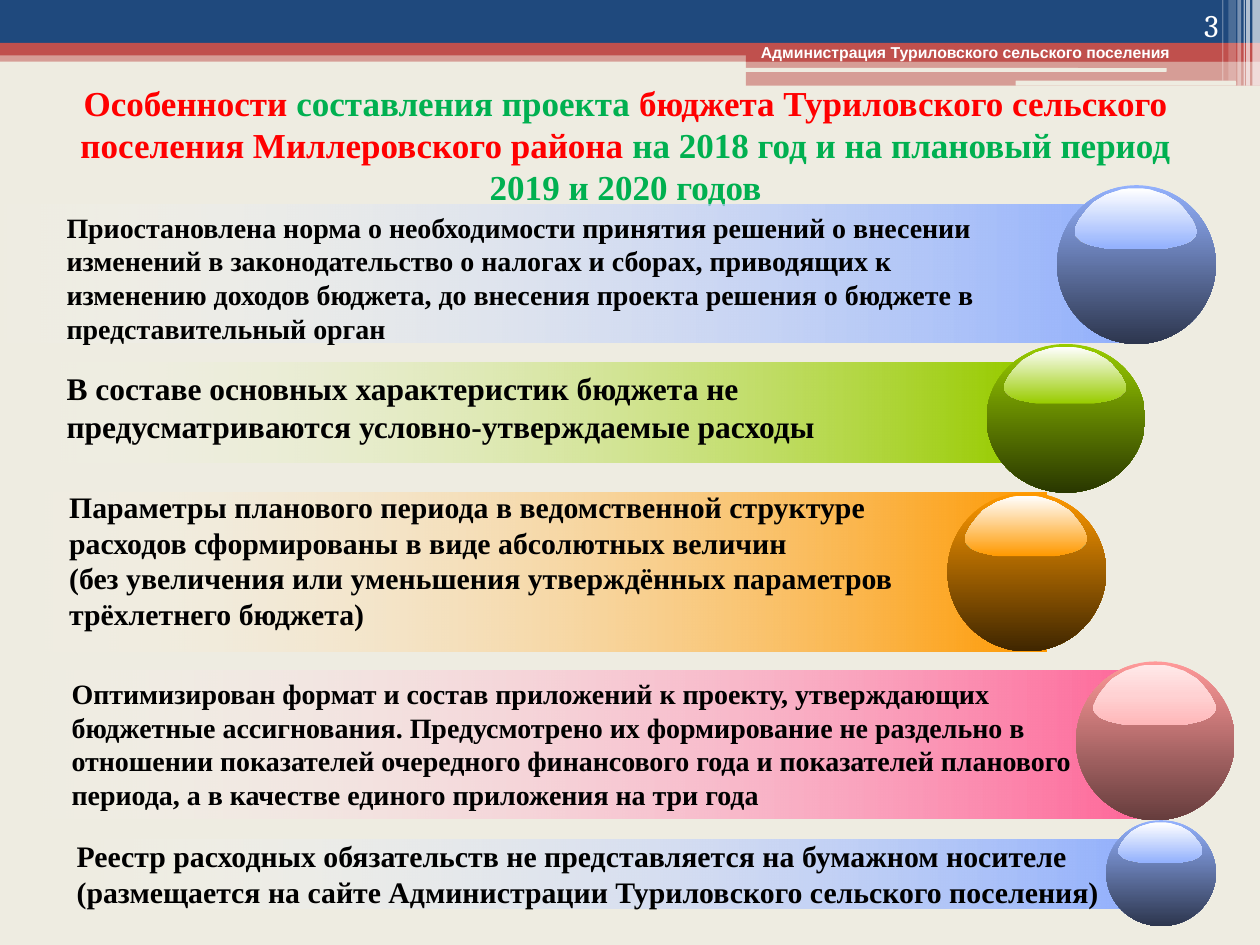
from pptx import Presentation
from pptx.dml.color import RGBColor
from pptx.enum.shapes import MSO_SHAPE
from pptx.enum.text import MSO_ANCHOR, PP_ALIGN
from pptx.oxml import parse_xml
from pptx.oxml.ns import nsdecls, qn
from pptx.util import Inches, Pt

RECTANGLE, ROUNDED, OVAL = MSO_SHAPE.RECTANGLE, MSO_SHAPE.ROUNDED_RECTANGLE, MSO_SHAPE.OVAL
TOP, MIDDLE, BOTTOM = MSO_ANCHOR.TOP, MSO_ANCHOR.MIDDLE, MSO_ANCHOR.BOTTOM
LEFT, CENTER, RIGHT = PP_ALIGN.LEFT, PP_ALIGN.CENTER, PP_ALIGN.RIGHT
SERIF = "Times New Roman"
RED, GREEN, BLACK, WHITE = "FF0000", "00B050", "000000", "FFFFFF"
CREAM, NAVY, BRICK = "EEECE1", "1F497D", "C0504D"

HEADER_BARS = [
    (RECTANGLE, (0, 0.4, 10, 0.09), BRICK, 50),
    (RECTANGLE, (0, 0, 10, 0.34), NAVY, 100),
    (RECTANGLE, (0, 0.34, 10, 0.1), BRICK, 100),
    (RECTANGLE, (5.92, 0.39, 4.08, 0.1), BRICK, 100),
    (RECTANGLE, (5.92, 0.48, 4.08, 0.2), BRICK, 50),
    (ROUNDED, (5.91, 0.54, 3.35, 0.03), CREAM, 100),
    (ROUNDED, (8.06, 0.64, 1.75, 0.04), CREAM, 100),
    (RECTANGLE, (9.94, 0, 0.06, 0.68), WHITE, 65),
    (RECTANGLE, (9.89, 0, 0.03, 0.68), WHITE, 65),
    (RECTANGLE, (9.87, 0, 0.01, 0.68), WHITE, 60),
    (RECTANGLE, (9.82, 0, 0.03, 0.68), WHITE, 40),
    (RECTANGLE, (9.75, 0, 0.06, 0.64), WHITE, 20),
    (RECTANGLE, (9.7, 0, 0.01, 0.64), WHITE, 30),
]

TITLE_RUNS = [
    ("Особенности", RED),
    (" составления проекта ", GREEN),
    ("бюджета Туриловского сельского поселения Миллеровского района ", RED),
    ("на 2018 год и на плановый период 2019 и 2020 годов", GREEN),
]

ROWS = [
    {"band": (-0.28, 1.62, 9.21, 1.1), "color": "93B1FD",
     "ball": (8.39, 1.47, 1.26, 1.26), "shade": 31, "text_box": (0.43, 1.62, 7.64, 1.18), "size": 16,
     "text": ["Приостановлена норма о необходимости принятия решений о внесении изменений в "
              "законодательство о налогах и сборах, приводящих к изменению доходов бюджета, "
              "до внесения проекта решения о бюджете в представительный орган"]},
    {"band": (0, 2.88, 8.07, 0.79), "color": "99CC00",
     "ball": (7.83, 2.73, 1.26, 1.18), "shade": 27, "text_box": (0.43, 2.88, 7.24, 0.71), "size": 18,
     "text": ["В составе основных характеристик бюджета не предусматриваются "
              "условно-утверждаемые расходы"]},
    {"band": (-0.12, 3.91, 8.43, 1.26), "color": "FF9900",
     "ball": (7.52, 3.91, 1.26, 1.26), "shade": 25, "text_box": (0.45, 3.83, 7.72, 1.51), "size": 17,
     "text": ["Параметры планового периода в ведомственной структуре",
              "расходов сформированы в виде абсолютных величин \n(без увеличения или уменьшения "
              "утверждённых параметров трёхлетнего бюджета)"]},
    {"band": (0, 5.32, 9.09, 1.18), "color": "FF6699", "ball_color": "FF9999",
     "gloss": ["FFE9E9", "FFD2D3", "FFB7B9"],
     "ball": (8.54, 5.25, 1.26, 1.26), "shade": 40, "text_box": (0.47, 5.32, 8.19, 1.18), "size": 16,
     "text": ["Оптимизирован формат и состав приложений к проекту, утверждающих бюджетные "
              "ассигнования. Предусмотрено их формирование не раздельно в отношении показателей "
              "очередного финансового года и показателей планового периода, а в качестве единого "
              "приложения на три года"]},
    {"band": (0.51, 6.66, 8.5, 0.55), "color": "93B1FD",
     "ball": (8.78, 6.51, 0.87, 0.84), "shade": 31, "size": 17,
     "text": ["Реестр расходных обязательств не представляется на бумажном носителе",
              "(размещается на сайте Администрации Туриловского сельского поселения)"]},
]

GLOSS_WIDTH, GLOSS_HEIGHT = 97, 47
GLOSS_LEFT_HALF = [
    (48.5, 0), (43, 0), (37, 1), (31, 3), (25, 5), (20, 8), (15, 11), (11, 15), (7, 20), (4, 24),
    (1, 30), (0, 32), (0, 35), (1, 37), (3, 39), (5, 41), (8, 42.5), (12, 44), (16, 45), (21, 46),
    (26, 47), (35, 47),
]


def box(values):
    return [Inches(value) for value in values]


def rgb(color):
    return RGBColor.from_string(color)


def finish(shape):
    shape.shadow.inherit = False
    shape.line.fill.background()


def color_xml(color, alpha=100, shade=100):
    effects = f'<a:alpha val="{alpha * 1000}"/>' if alpha < 100 else ""
    if shade < 100:
        effects += f'<a:gamma/><a:shade val="{shade * 1000}"/><a:invGamma/>'
    return f'<a:srgbClr val="{color}">{effects}</a:srgbClr>'


def fill_gradient(shape, colors, angle):
    """Fill with evenly spaced colors, running clockwise from the left."""
    step = 100000 // (len(colors) - 1)
    stops = "".join(f'<a:gs pos="{index * step}">{color}</a:gs>'
                    for index, color in enumerate(colors))
    shape.fill.background()
    properties = shape._element.spPr
    properties.replace(properties.find(qn("a:noFill")), parse_xml(
        f'<a:gradFill {nsdecls("a")} rotWithShape="1"><a:gsLst>{stops}</a:gsLst>'
        f'<a:lin ang="{angle * 60000}" scaled="0"/></a:gradFill>'))
    finish(shape)


def add_bar(shapes, kind, position, color, opacity):
    bar = shapes.add_shape(kind, *box(position))
    bar.fill.solid()
    bar.fill.fore_color.rgb = rgb(color)
    if opacity < 100:
        color_element = bar._element.spPr.find(qn("a:solidFill"))[0]
        color_element.append(parse_xml(f'<a:alpha {nsdecls("a")} val="{opacity * 1000}"/>'))
    finish(bar)


def write(shape, texts, size, font=SERIF, color=BLACK, bold=True, align=LEFT, anchor=TOP, wrap=True):
    frame = shape.text_frame
    frame.word_wrap = wrap
    frame.vertical_anchor = anchor
    for index, text in enumerate(texts):
        paragraph = frame.add_paragraph() if index else frame.paragraphs[0]
        paragraph.text = text
        paragraph.alignment = align
        paragraph.font.size = Pt(size)
        paragraph.font.name = font
        paragraph.font.bold = bold
        paragraph.font.color.rgb = rgb(color)


def add_ball(shapes, position, color, shade, gloss_colors):
    left, top, width, height = position
    group = shapes.add_group_shape()
    sphere = group.shapes.add_shape(OVAL, *box(position))
    fill_gradient(sphere, [color_xml(color), color_xml(color, shade=shade)], 90)

    right_half = [(GLOSS_WIDTH - x, y) for x, y in reversed(GLOSS_LEFT_HALF[1:])]
    points = [box((left + width * (0.11 + 0.77 * x / GLOSS_WIDTH),
                   top + height * (0.02 + 0.38 * y / GLOSS_HEIGHT)))
              for x, y in GLOSS_LEFT_HALF + right_half]
    builder = group.shapes.build_freeform(*points[0])
    builder.add_line_segments(points[1:], close=True)
    fill_gradient(builder.convert_to_shape(), [color_xml(tone) for tone in gloss_colors], 90)


def add_row(shapes, row):
    band = shapes.add_shape(RECTANGLE, *box(row["band"]))
    fill_gradient(band, [color_xml(WHITE, alpha=0), color_xml(row["color"])], 0)
    add_ball(shapes, row["ball"], row.get("ball_color", row["color"]), row["shade"],
             row.get("gloss", [WHITE, row["color"]]))
    if "text_box" in row:
        write(shapes.add_textbox(*box(row["text_box"])), row["text"], row["size"])
    else:
        write(band, row["text"], row["size"], anchor=MIDDLE, wrap=False)


def add_title(title):
    title.left, title.top, title.width, title.height = box((0.28, 0.6, 9.37, 1.11))
    write(title, [""], 20, align=CENTER)
    for text, color in TITLE_RUNS:
        run = title.text_frame.paragraphs[0].add_run()
        run.text = text
        run.font.color.rgb = rgb(color)


def main():
    presentation = Presentation()
    presentation.slide_width, presentation.slide_height = box((10, 7.5))
    slide = presentation.slides.add_slide(presentation.slide_layouts[5])
    slide.background.fill.solid()
    slide.background.fill.fore_color.rgb = rgb(CREAM)
    shapes = slide.shapes
    for bar in HEADER_BARS:
        add_bar(shapes, *bar)
    add_title(shapes.title)
    for row in ROWS:
        add_row(shapes, row)
    write(shapes.add_textbox(*box((5.94, 0.29, 3.66, 0.25))),
          ["Администрация Туриловского сельского поселения"], 9, font="Arial", color=WHITE)
    write(shapes.add_textbox(*box((8.94, 0, 0.83, 0.4))), ["3"], 18, font="Cambria", color=WHITE,
          bold=False, align=RIGHT, anchor=BOTTOM)
    presentation.save("out.pptx")


if __name__ == "__main__":
    main()
